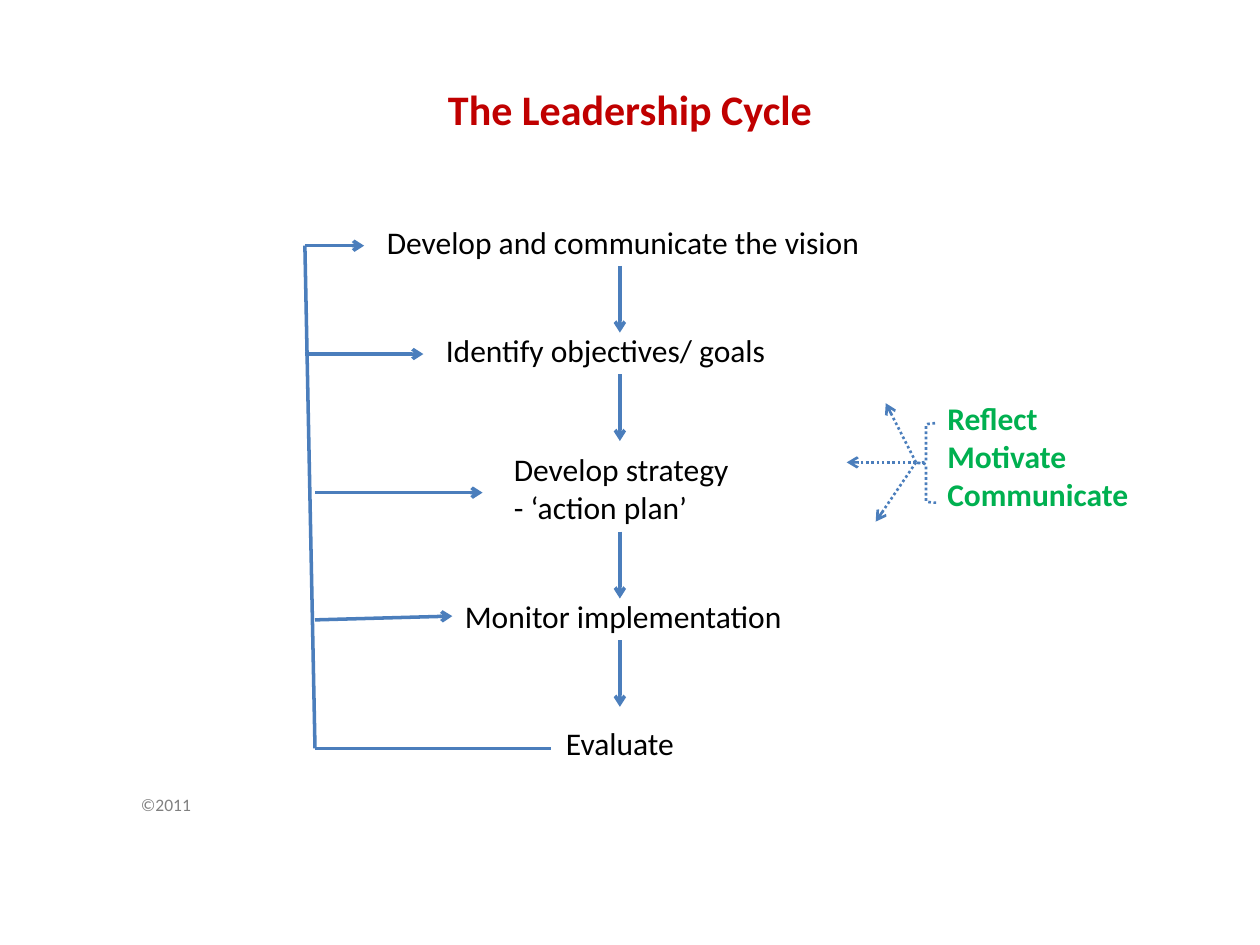
from lxml import etree
from pptx import Presentation
from pptx.dml.color import RGBColor
from pptx.enum.dml import MSO_LINE_DASH_STYLE as DASH
from pptx.enum.shapes import MSO_CONNECTOR, MSO_SHAPE
from pptx.enum.text import MSO_ANCHOR, MSO_AUTO_SIZE, PP_ALIGN
from pptx.oxml.ns import qn
from pptx.util import Inches, Pt

BLUE, RED, GREEN, GRAY, BLACK = "4B7EBC", "C00000", "00B050", "808080", "000000"


def color(value):
    return RGBColor.from_string(value)


def write(frame, text, size=18, fill=BLACK, bold=False, align=PP_ALIGN.LEFT,
          anchor=MSO_ANCHOR.TOP):
    frame.word_wrap = True
    frame.auto_size = MSO_AUTO_SIZE.NONE
    frame.vertical_anchor = anchor
    frame.text = text
    for paragraph in frame.paragraphs:
        paragraph.alignment = align
        for run in paragraph.runs:
            font = run.font
            font.name, font.size, font.bold = "Calibri", Pt(size), bold
            font.color.rgb = color(fill)


def place(shape, left, top, width, height):
    shape.left, shape.top = Inches(left), Inches(top)
    shape.width, shape.height = Inches(width), Inches(height)


def add_text(slide, box, text, **style):
    label = slide.shapes.add_textbox(*map(Inches, box))
    write(label.text_frame, text, **style)


def style_line(line, width, dash=None):
    line.color.rgb = color(BLUE)
    line.width = Pt(width)
    if dash:
        line.dash_style = dash


def add_line(slide, start, end, width=2, dash=None, arrow=True):
    link = slide.shapes.add_connector(
        MSO_CONNECTOR.STRAIGHT, *map(Inches, (*start, *end)))
    style_line(link.line, width, dash)
    properties = link._element.spPr
    if arrow:
        etree.SubElement(properties.find(qn("a:ln")), qn("a:tailEnd"), type="arrow")
    etree.SubElement(properties, qn("a:effectLst"))


def add_title(slide, box):
    title = slide.shapes.title
    place(title, *box)
    write(title.text_frame, "The Leadership Cycle", size=24, fill=RED, bold=True,
          align=PP_ALIGN.CENTER, anchor=MSO_ANCHOR.MIDDLE)


def add_steps(slide, left, top):
    # First step sits in the body placeholder, without its bullet
    vision = slide.placeholders[1]
    place(vision, left, top, 4.03, 0.44)
    write(vision.text_frame, "Develop and communicate the vision")
    indent = vision.text_frame.paragraphs[0]._p.get_or_add_pPr()
    indent.set("marL", str(Inches(0.38)))
    indent.set("indent", str(-Inches(0.38)))
    etree.SubElement(indent, qn("a:buNone"))

    # Later steps: offset from the corner, size, wording, alignment
    steps = [
        (0.47, 0.86, 2.81, 0.4, "Identify objectives/ goals", PP_ALIGN.LEFT),
        (1.01, 1.8, 2.11, 0.71, "Develop strategy\n- ‘action plan’", PP_ALIGN.LEFT),
        (0.62, 2.97, 2.81, 0.4, "Monitor implementation", PP_ALIGN.LEFT),
        (1.01, 3.98, 1.88, 0.4, "Evaluate", PP_ALIGN.CENTER),
    ]
    for dx, dy, width, height, text, align in steps:
        add_text(slide, (left + dx, top + dy, width, height), text, align=align)

    # Equal arrows from each step down to the next
    axis = left + 1.95
    for dy in (0.39, 1.25, 2.5, 3.36):
        add_line(slide, (axis, top + dy), (axis, top + dy + 0.53))


def add_feedback_loop(slide, left, top):
    foot_x, foot_y = left + 0.08, top + 3.99
    add_line(slide, (left, top), (foot_x, foot_y), arrow=False)
    add_line(slide, (foot_x, foot_y), (left + 1.95, foot_y), arrow=False)
    # Branches back to the steps: start x, start y, end x, end y
    for x1, y1, x2, y2 in ((0, 0, 0.47, 0), (0, 0.86, 0.94, 0.86),
                           (0.08, 1.96, 1.41, 1.96), (0.08, 2.97, 1.17, 2.94)):
        add_line(slide, (left + x1, top + y1), (left + x2, top + y2))


def add_behaviours(slide, left, top):
    add_text(slide, (left + 0.7, top, 1.64, 1.01), "Reflect\nMotivate\nCommunicate",
             fill=GREEN, bold=True)
    # Dotted brace and the arrows that fan out from its point
    brace = slide.shapes.add_shape(
        MSO_SHAPE.LEFT_BRACE, *map(Inches, (left + 0.55, top + 0.24, 0.16, 0.63)))
    brace.shadow.inherit = False
    brace.fill.background()
    style_line(brace.line, 1.5, DASH.ROUND_DOT)
    hub = (left + 0.55, top + 0.55)
    for dx, dy in ((0.31, 0.08), (0, 0.55), (0.23, 1.02)):
        add_line(slide, hub, (left + dx, top + dy), width=1.5, dash=DASH.ROUND_DOT)


def add_copyright(slide, box):
    add_text(slide, box, "©2011", size=10, fill=GRAY)


def main():
    deck = Presentation()
    deck.slide_width, deck.slide_height = Inches(10), Inches(7.5)
    slide = deck.slides.add_slide(deck.slide_layouts[1])
    add_title(slide, (0.5, 0.55, 9, 0.63))
    add_steps(slide, 2.97, 1.72)
    add_feedback_loop(slide, 2.42, 1.95)
    add_behaviours(slide, 6.72, 3.12)
    add_copyright(slide, (1.02, 6.25, 1.72, 0.57))
    deck.save("out.pptx")


if __name__ == "__main__":
    main()
